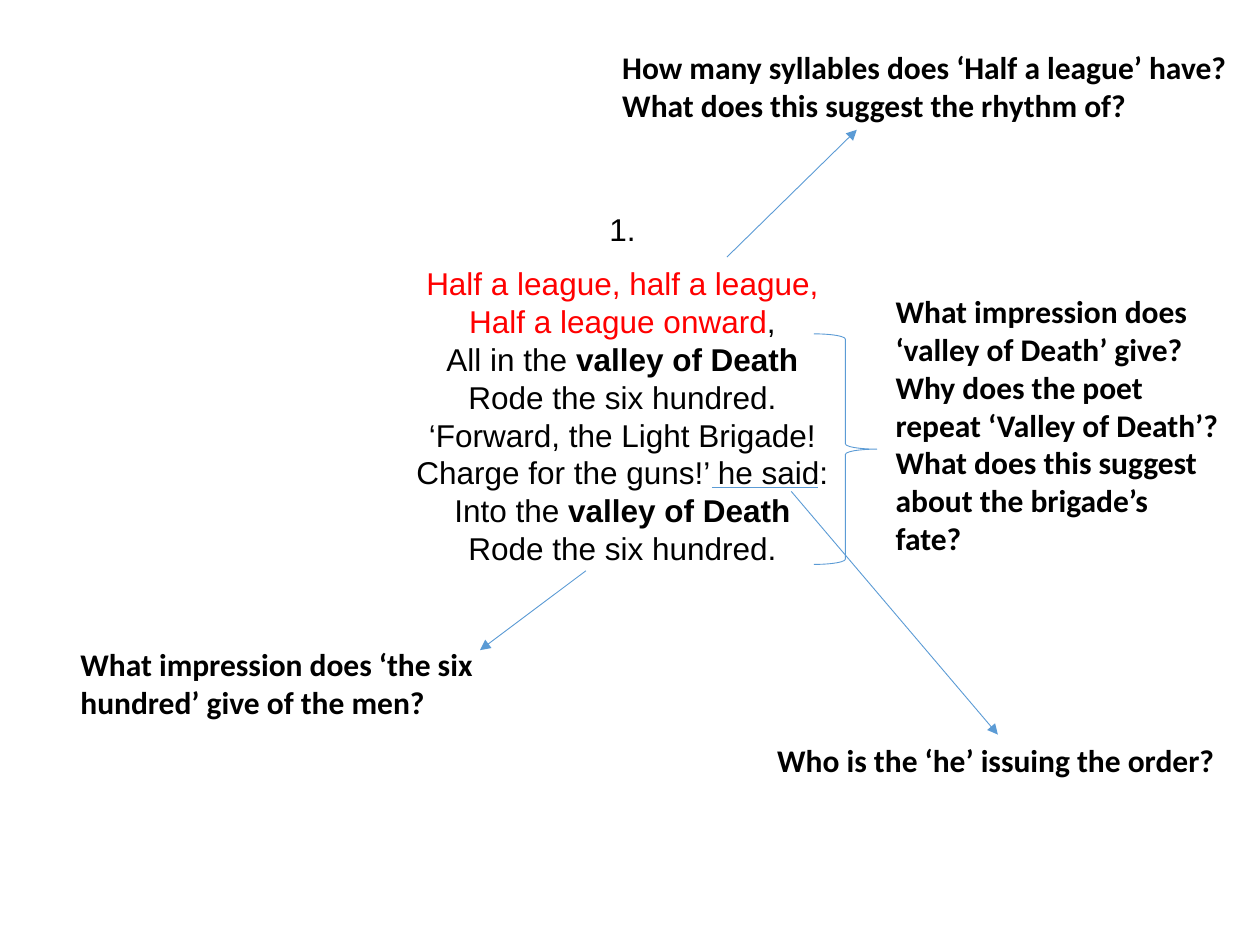
from lxml import etree
from pptx import Presentation
from pptx.dml.color import RGBColor
from pptx.enum.shapes import MSO_CONNECTOR, MSO_SHAPE
from pptx.enum.text import MSO_ANCHOR, MSO_AUTO_SIZE, PP_ALIGN
from pptx.oxml.ns import qn
from pptx.util import Inches, Pt

STRAIGHT = MSO_CONNECTOR.STRAIGHT
RIGHT_BRACE = MSO_SHAPE.RIGHT_BRACE
GROW = MSO_AUTO_SIZE.SHAPE_TO_FIT_TEXT
TOP = MSO_ANCHOR.TOP
LEFT, CENTER = PP_ALIGN.LEFT, PP_ALIGN.CENTER
BLANK_LAYOUT = 6
COLUMNS, ROWS = 100, 75
BLACK, RED, BLUE = "000000", "FF0000", "5B9BD5"


def color(value):
    return RGBColor.from_string(value)


def add_span(para, text, font="Calibri", size=18, ink=BLACK, bold=False):
    span = para.add_run()
    span.text = text
    span.font.name = font
    span.font.size = Pt(size)
    span.font.bold = bold
    span.font.color.rgb = color(ink)


class Annotation:
    def __init__(self, deck):
        self.width, self.height = deck.slide_width, deck.slide_height
        self.page = deck.slides.add_slide(deck.slide_layouts[BLANK_LAYOUT])

    def place(self, column, row):
        return round(self.width * column / COLUMNS), round(self.height * row / ROWS)

    def style_line(self, shape):
        shape.line.color.rgb = color(BLUE)
        shape.line.width = Pt(0.5)

    def text_box(self, column, row, columns, rows, lines, align=LEFT, wrap=True,
                 first_gap=0, **style):
        box = self.page.shapes.add_textbox(*self.place(column, row), *self.place(columns, rows))
        frame = box.text_frame
        frame.word_wrap = wrap
        frame.auto_size = GROW
        frame.vertical_anchor = TOP
        for index, line in enumerate(lines):
            para = frame.add_paragraph() if index else frame.paragraphs[0]
            para.alignment = align
            for text, changes in line:
                add_span(para, text, **{**style, **changes})
        frame.paragraphs[0].space_after = Pt(first_gap)

    def question(self, column, row, columns, rows, *lines, wrap=True):
        self.text_box(column, row, columns, rows, [[(line, {})] for line in lines],
                      wrap=wrap, bold=True)

    def line(self, start, end, arrow=True):
        line = self.page.shapes.add_connector(STRAIGHT, *self.place(*start), *self.place(*end))
        self.style_line(line)
        if arrow:
            etree.SubElement(line.line._get_or_add_ln(), qn("a:tailEnd"), type="triangle")
        etree.SubElement(line._element.spPr, qn("a:effectLst"))

    def brace(self, column, row, columns, rows):
        brace = self.page.shapes.add_shape(
            RIGHT_BRACE, *self.place(column, row), *self.place(columns, rows))
        brace.shadow.inherit = False
        brace.fill.background()
        self.style_line(brace)


def main():
    deck = Presentation()
    deck.slide_width, deck.slide_height = Inches(10), Inches(7.5)
    poem = Annotation(deck)

    red, strong = {"ink": RED}, {"bold": True}
    valley = ("valley of Death", strong)
    refrain = [("Rode the six hundred.", {})]
    stanza = [
        [("1.", {})],
        [("Half a league, half a league,", red)],
        [("Half a league onward", red), (",", {})],
        [("All in the ", {}), valley],
        refrain,
        [("‘Forward, the Light Brigade!", {})],
        [("Charge for the guns!’ he said:", {})],
        [("Into the ", {}), valley],
        refrain,
    ]
    poem.text_box(24.4, 16.2, 50, 29.6, stanza, align=CENTER, first_gap=9.3, font="Arial")

    poem.question(48.4, 3.3, 50.4, 10.1,
                  "How many syllables does ‘Half a league’ have?",
                  "What does this suggest the rhythm of?", wrap=False)
    poem.line((57.7, 20.4), (68, 10.3))

    poem.question(70.1, 22.7, 27.6, 25.2,
                  "What impression does ‘valley of Death’ give?",
                  "Why does the poet repeat ‘Valley of Death’? "
                  "What does this suggest about the brigade’s fate?")
    poem.brace(64.6, 26.5, 5, 18.3)

    poem.question(60.7, 58.3, 37, 4, "Who is the ‘he’ issuing the order?", wrap=False)
    poem.line((62.8, 39), (79.2, 58.3))
    poem.line((56.5, 38.7), (64.9, 38.7), arrow=False)

    poem.question(5.4, 50.7, 36.7, 7.1,
                  "What impression does ‘the six hundred’ give of the men?")
    poem.line((46.5, 45.3), (38.1, 51.6))

    deck.save("out.pptx")


if __name__ == "__main__":
    main()
